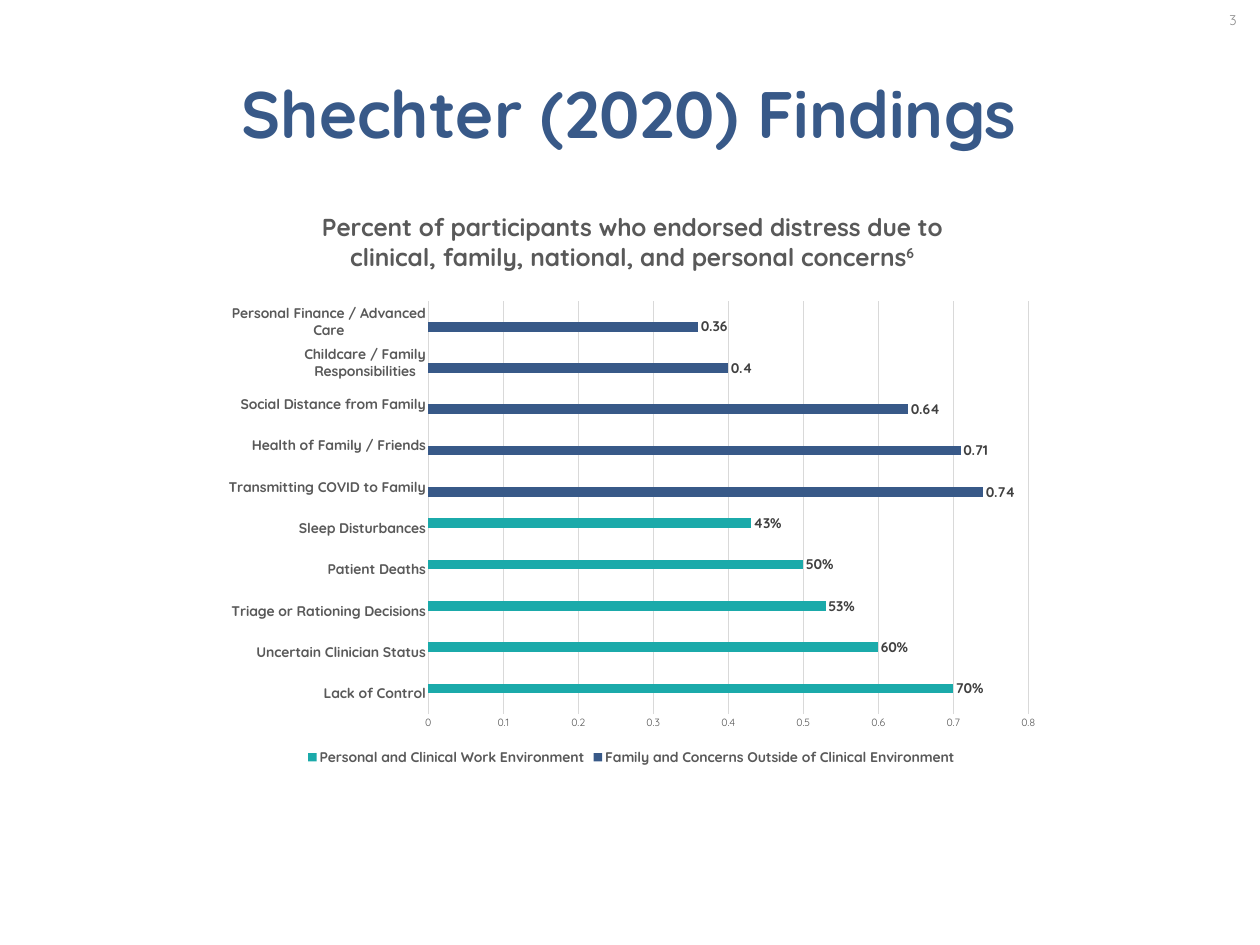
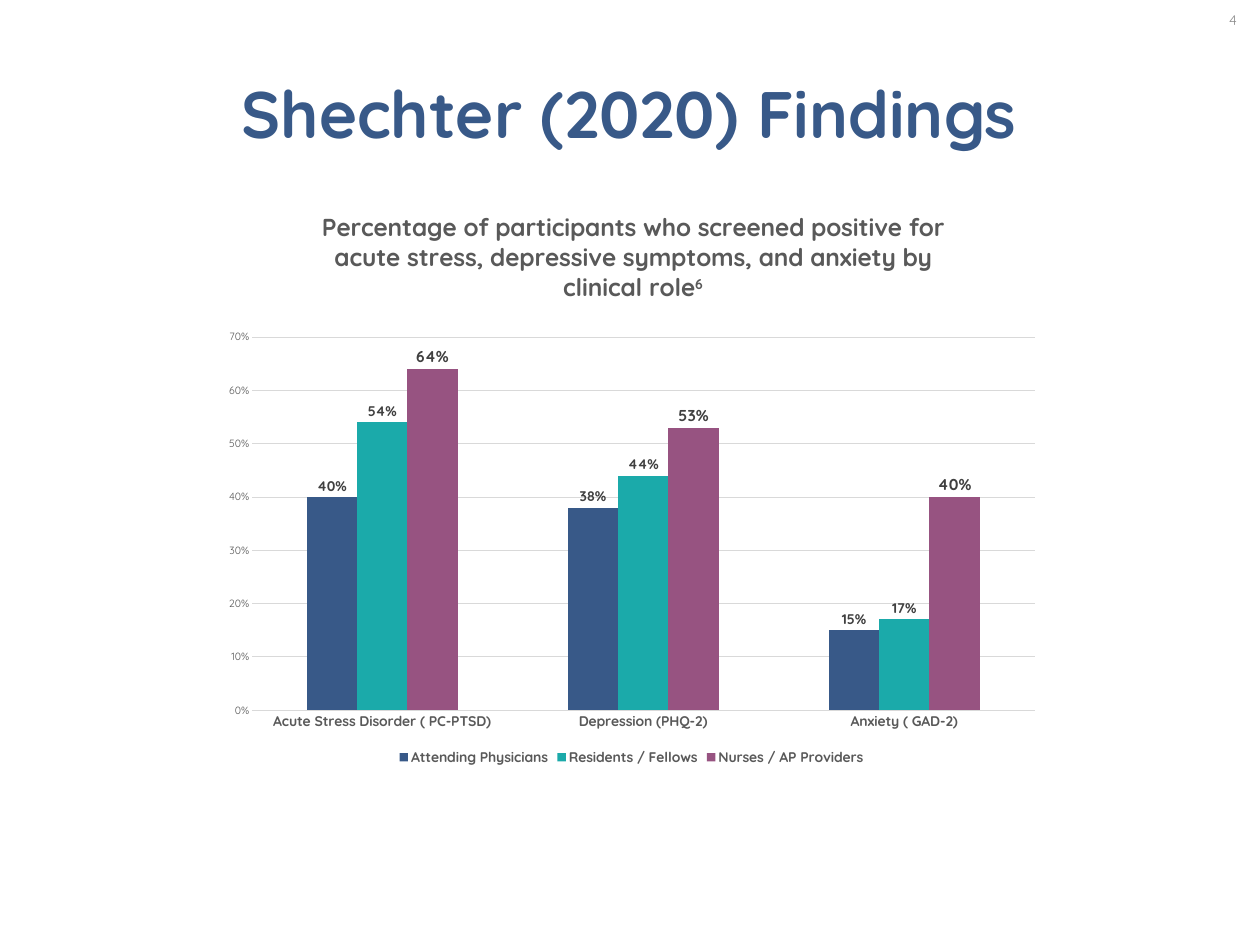
from lxml.etree import SubElement
from pptx import Presentation
from pptx.chart.data import CategoryChartData
from pptx.dml.color import RGBColor
from pptx.enum.chart import XL_CHART_TYPE, XL_LABEL_POSITION, XL_LEGEND_POSITION, XL_TICK_MARK
from pptx.enum.text import MSO_ANCHOR, PP_ALIGN
from pptx.oxml.ns import qn
from pptx.util import Cm, Pt

FONT = "Quicksand"
NAVY, TEAL, PLUM = "385988", "1BAAAA", "975381"
GRAY, DARK, PALE, NUMBER_GRAY = "595959", "404040", "D9D9D9", "8C8C8C"

PAGE_SIZE = (50.8, 38.1)
NUMBER_BOX = (48.62, 0, 2.18, 1.6)
TITLE_BOX = (2.11, 2.67, 46.5, 3.68)
CHART_BOX = (8.53, 8.41, 33.86, 22.58)
CHART_TITLE_CORNER = (4.37, 0)

BOLD_GRAY = {"size": 16, "bold": True, "color": GRAY}
CHART_TITLE = {"size": 28, "bold": True, "color": GRAY}
VALUE_AXIS = {"size": 12, "bold": False, "color": GRAY}

FINDINGS = [
    {
        "number": "3",
        "kind": XL_CHART_TYPE.BAR_CLUSTERED,
        "heading": "Percent of participants who endorsed distress due to "
                   "clinical, family, national, and personal concerns",
        "plot": (8.74, 3.73, 24.19, 16.65),
        "maximum": 0.8,
        "axis_format": "General",
        "categories": [
            "Lack of Control", "Uncertain Clinician Status", "Triage or Rationing Decisions",
            "Patient Deaths", "Sleep Disturbances", "Transmitting COVID to Family",
            "Health of Family / Friends", "Social Distance from Family",
            "Childcare / Family Responsibilities", "Personal Finance / Advanced Care",
        ],
        "series": [
            ("Family and Concerns Outside of Clinical Environment",
             [None] * 5 + [0.74, 0.71, 0.64, 0.4, 0.36], NAVY, 16, "General"),
            ("Personal and Clinical Work Environment",
             [0.7, 0.6, 0.53, 0.5, 0.43] + [None] * 5, TEAL, 16, "0%"),
        ],
    },
    {
        "number": "4",
        "kind": XL_CHART_TYPE.COLUMN_CLUSTERED,
        "heading": "Percentage of participants who screened positive for "
                   "acute stress, depressive symptoms, and anxiety by clinical role",
        "plot": (1.62, 5.18, 31.57, 15.04),
        "maximum": 0.7,
        "axis_format": "0%",
        "categories": ["Acute Stress Disorder ( PC-PTSD)", "Depression (PHQ-2)",
                       "Anxiety ( GAD-2)"],
        "series": [
            ("Attending Physicians", [0.4, 0.38, 0.15], NAVY, 16, "0%"),
            ("Residents / Fellows", [0.54, 0.44, 0.17], TEAL, 16, "0%"),
            ("Nurses / AP Providers", [0.64, 0.53, 0.4], PLUM, 18, "0%"),
        ],
    },
]


def rgb(value):
    return RGBColor.from_string(value)


def style_font(font, size, color, bold=False):
    for name, value in {"name": FONT, "size": Pt(size), "bold": bold}.items():
        setattr(font, name, value)
    font.color.rgb = rgb(color)


def add_label(page, frame, text, **style):
    """Add one centred line of text in the middle of the frame."""
    box = page.shapes.add_textbox(*map(Cm, frame))
    text_frame = box.text_frame
    text_frame.word_wrap = True
    text_frame.vertical_anchor = MSO_ANCHOR.MIDDLE
    para = text_frame.paragraphs[0]
    para.alignment = PP_ALIGN.CENTER
    span = para.add_run()
    span.text = text
    style_font(span.font, **style)


def set_layout(parent, index, values):
    """Fix the place of a chart part, with values as fractions of the chart."""
    for old in parent.findall(qn("c:layout")):
        parent.remove(old)
    layout = SubElement(parent, qn("c:layout"))
    parent.insert(index, layout)
    manual = SubElement(layout, qn("c:manualLayout"))
    for name, value in values.items():
        SubElement(manual, qn(f"c:{name}")).set("val", str(value))


def add_chart_title(chart, heading):
    title = chart.chart_title
    title.include_in_layout = False
    para = title.text_frame.paragraphs[0]
    para.alignment = PP_ALIGN.CENTER
    style_font(para.font, **CHART_TITLE)
    for text, raised in ((heading, False), ("6", True)):
        span = para.add_run()
        span.text = text
        style_font(span.font, **CHART_TITLE)
        if raised:
            span._r.get_or_add_rPr().set("baseline", "30000")
    left, top = CHART_TITLE_CORNER
    set_layout(title._element, 1, {
        "xMode": "edge", "yMode": "edge",
        "x": left / CHART_BOX[2], "y": top / CHART_BOX[3]})


def place_plot(chart, frame):
    left, top, width, height = frame
    chart_width, chart_height = CHART_BOX[2:]
    set_layout(chart._chartSpace.chart.plotArea, 0, {
        "layoutTarget": "inner", "xMode": "edge", "yMode": "edge",
        "x": left / chart_width, "y": top / chart_height,
        "w": width / chart_width, "h": height / chart_height})


def style_axes(chart, maximum, number_format):
    category_axis, value_axis = chart.category_axis, chart.value_axis
    for axis, style in ((category_axis, BOLD_GRAY), (value_axis, VALUE_AXIS)):
        axis.major_tick_mark = axis.minor_tick_mark = XL_TICK_MARK.NONE
        style_font(axis.tick_labels.font, **style)
    category_axis.has_major_gridlines = False
    value_axis.has_major_gridlines = True
    for line in (category_axis.format.line, value_axis.major_gridlines.format.line):
        line.color.rgb = rgb(PALE)
        line.width = Pt(0.75)
    value_axis.format.line.fill.background()
    scale = {"minimum_scale": 0, "maximum_scale": maximum, "major_unit": 0.1}
    for name, value in scale.items():
        setattr(value_axis, name, value)
    value_axis.tick_labels.number_format = number_format
    value_axis.tick_labels.number_format_is_linked = False


def style_series(series, color, label_size, number_format):
    series.format.fill.solid()
    series.format.fill.fore_color.rgb = rgb(color)
    series.invert_if_negative = False
    labels = series.data_labels
    settings = {"show_value": True, "position": XL_LABEL_POSITION.OUTSIDE_END,
                "number_format": number_format, "number_format_is_linked": False}
    for name, value in settings.items():
        setattr(labels, name, value)
    style_font(labels.font, label_size, DARK, True)


def add_findings_chart(page, finding):
    data = CategoryChartData()
    data.categories = finding["categories"]
    for name, values, *_ in finding["series"]:
        data.add_series(name, values)
    chart = page.shapes.add_chart(finding["kind"], *map(Cm, CHART_BOX), data).chart
    style_font(chart.font, 10, "000000")
    add_chart_title(chart, finding["heading"])
    place_plot(chart, finding["plot"])
    style_axes(chart, finding["maximum"], finding["axis_format"])

    plot = chart.plots[0]
    for name, value in {"gap_width": 219, "overlap": 0, "vary_by_categories": False}.items():
        setattr(plot, name, value)
    for series, (_, _, *style) in zip(plot.series, finding["series"]):
        style_series(series, *style)

    chart.has_legend = True
    chart.legend.position = XL_LEGEND_POSITION.BOTTOM
    chart.legend.include_in_layout = False
    style_font(chart.legend.font, **BOLD_GRAY)


def add_findings_page(deck, finding):
    page = deck.slides.add_slide(deck.slide_layouts[6])
    add_label(page, NUMBER_BOX, finding["number"], size=16, color=NUMBER_GRAY)
    add_label(page, TITLE_BOX, "Shechter (2020) Findings", size=75, color=NAVY, bold=True)
    add_findings_chart(page, finding)


def main():
    deck = Presentation()
    deck.slide_width, deck.slide_height = map(Cm, PAGE_SIZE)
    for finding in FINDINGS:
        add_findings_page(deck, finding)
    deck.save("out.pptx")


if __name__ == "__main__":
    main()
